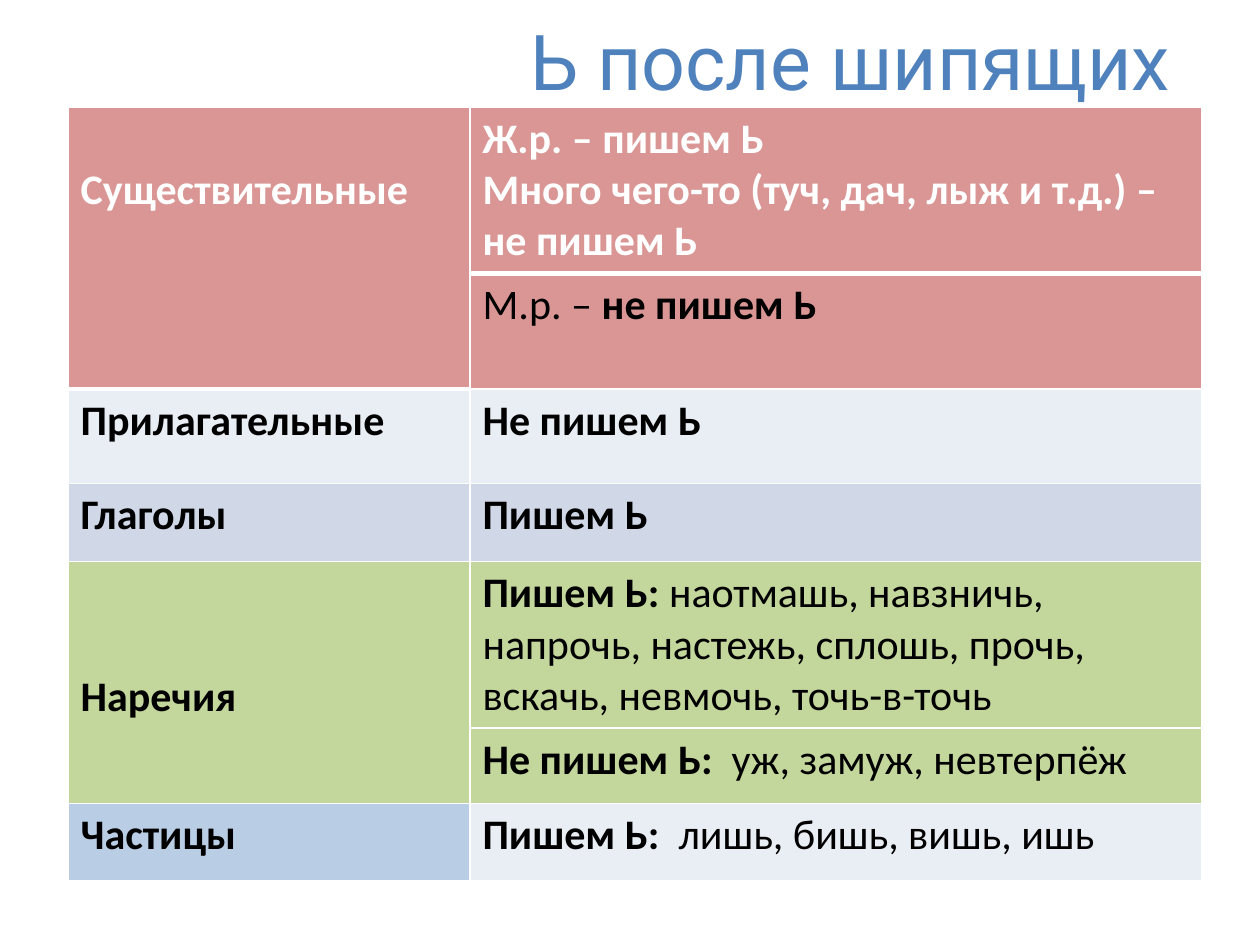
from lxml import etree
from pptx import Presentation
from pptx.dml.color import RGBColor
from pptx.enum.text import MSO_ANCHOR, PP_ALIGN
from pptx.oxml.ns import qn
from pptx.util import Inches, Pt

CENTER = PP_ALIGN.CENTER
MIDDLE = MSO_ANCHOR.MIDDLE
TOP = MSO_ANCHOR.TOP
BLUE = RGBColor(0x4F, 0x81, 0xBD)
WHITE = RGBColor(0xFF, 0xFF, 0xFF)
BLACK = RGBColor(0x00, 0x00, 0x00)
ROSE = RGBColor(0xD9, 0x96, 0x94)
PALE = RGBColor(0xE9, 0xED, 0xF4)
LAVENDER = RGBColor(0xD0, 0xD8, 0xE8)
GREEN = RGBColor(0xC3, 0xD6, 0x9B)
SKY = RGBColor(0xB9, 0xCD, 0xE5)

COLUMN_WIDTHS = [3.19, 5.81]
ROW_HEIGHTS = [1.31, 0.91, 0.75, 0.62, 1.32, 0.6, 0.61]
TEXT_SIZE = 24
LINE_HEIGHT = 0.41
CELL_MARGIN = 0.05
MERGED_ROWS = {0: 1, 4: 2}
THICK_EDGES = {(0, 1, "B"), (1, 1, "T"), (0, 0, "B"), (1, 0, "B"), (2, 0, "T")}

ROWS = [
    ("Существительные", ROSE, WHITE, ROSE, [
        [("Ж.р. – пишем Ь", True)],
        [("Много чего-то (туч, дач, лыж и т.д.) – не пишем Ь", True)]]),
    ("", ROSE, BLACK, ROSE, [[("М.р. – ", False), ("не пишем Ь", True)]]),
    ("Прилагательные", PALE, BLACK, PALE, [[("Не пишем Ь", True)]]),
    ("Глаголы", LAVENDER, BLACK, LAVENDER, [[("Пишем Ь", True)]]),
    ("Наречия", GREEN, BLACK, GREEN, [
        [("Пишем Ь: ", True),
         ("наотмашь, навзничь, напрочь, настежь, сплошь, прочь, "
          "вскачь, невмочь, точь-в-точь", False)]]),
    ("", GREEN, BLACK, GREEN, [
        [("Не пишем Ь:  ", True), ("уж, замуж, невтерпёж", False)]]),
    ("Частицы", SKY, BLACK, PALE, [
        [("Пишем Ь:  ", True), ("лишь, бишь, вишь, ишь", False)]]),
]


def add_run(paragraph, text, font_name, size, color, bold):
    run = paragraph.add_run()
    run.text = text
    run.font.name = font_name
    run.font.size = Pt(size)
    run.font.color.rgb = color
    run.font.bold = bold


def add_border(cell, side, points):
    properties = cell._tc.get_or_add_tcPr()
    line = etree.SubElement(properties, qn(f"a:ln{side}"), w=str(Pt(points)))
    fill = etree.SubElement(line, qn("a:solidFill"))
    etree.SubElement(fill, qn("a:srgbClr"), val=str(WHITE))


presentation = Presentation()
presentation.slide_width = Inches(10)
presentation.slide_height = Inches(7.5)
slide = presentation.slides.add_slide(presentation.slide_layouts[5])

title = slide.shapes.title
title.left, title.top = Inches(2.25), Inches(-0.16)
title.width, title.height = Inches(9), Inches(1.27)
title.text_frame.vertical_anchor = MIDDLE
title_paragraph = title.text_frame.paragraphs[0]
title_paragraph.alignment = CENTER
add_run(title_paragraph, "Ь после шипящих", "Roboto", 44, BLUE, False)

table = slide.shapes.add_table(
    len(ROW_HEIGHTS), len(COLUMN_WIDTHS), Inches(0.54), Inches(0.85),
    Inches(sum(COLUMN_WIDTHS)), Inches(sum(ROW_HEIGHTS))).table
for column, width in zip(table.columns, COLUMN_WIDTHS):
    column.width = Inches(width)
for row, height in zip(table.rows, ROW_HEIGHTS):
    row.height = Inches(height)

for row_index, (label, label_fill, color, rule_fill, rules) in enumerate(ROWS):
    label_paragraphs = [[(label, True)]] if label else []
    contents = [(label_fill, label_paragraphs), (rule_fill, rules)]
    for column_index, (fill, paragraphs) in enumerate(contents):
        cell = table.cell(row_index, column_index)
        cell.vertical_anchor = TOP
        for side in "LRTB":
            thick = (row_index, column_index, side) in THICK_EDGES
            add_border(cell, side, 3 if thick else 1)
        cell.fill.solid()
        cell.fill.fore_color.rgb = fill
        for index, runs in enumerate(paragraphs):
            frame = cell.text_frame
            paragraph = frame.add_paragraph() if index else frame.paragraphs[0]
            for text, bold in runs:
                add_run(paragraph, text, "Calibri", TEXT_SIZE, color, bold)

for row_index, lines_above in MERGED_ROWS.items():
    cell = table.cell(row_index, 0)
    cell.margin_top = Inches(CELL_MARGIN + lines_above * LINE_HEIGHT)
    cell.merge(table.cell(row_index + 1, 0))

presentation.save("out.pptx")
